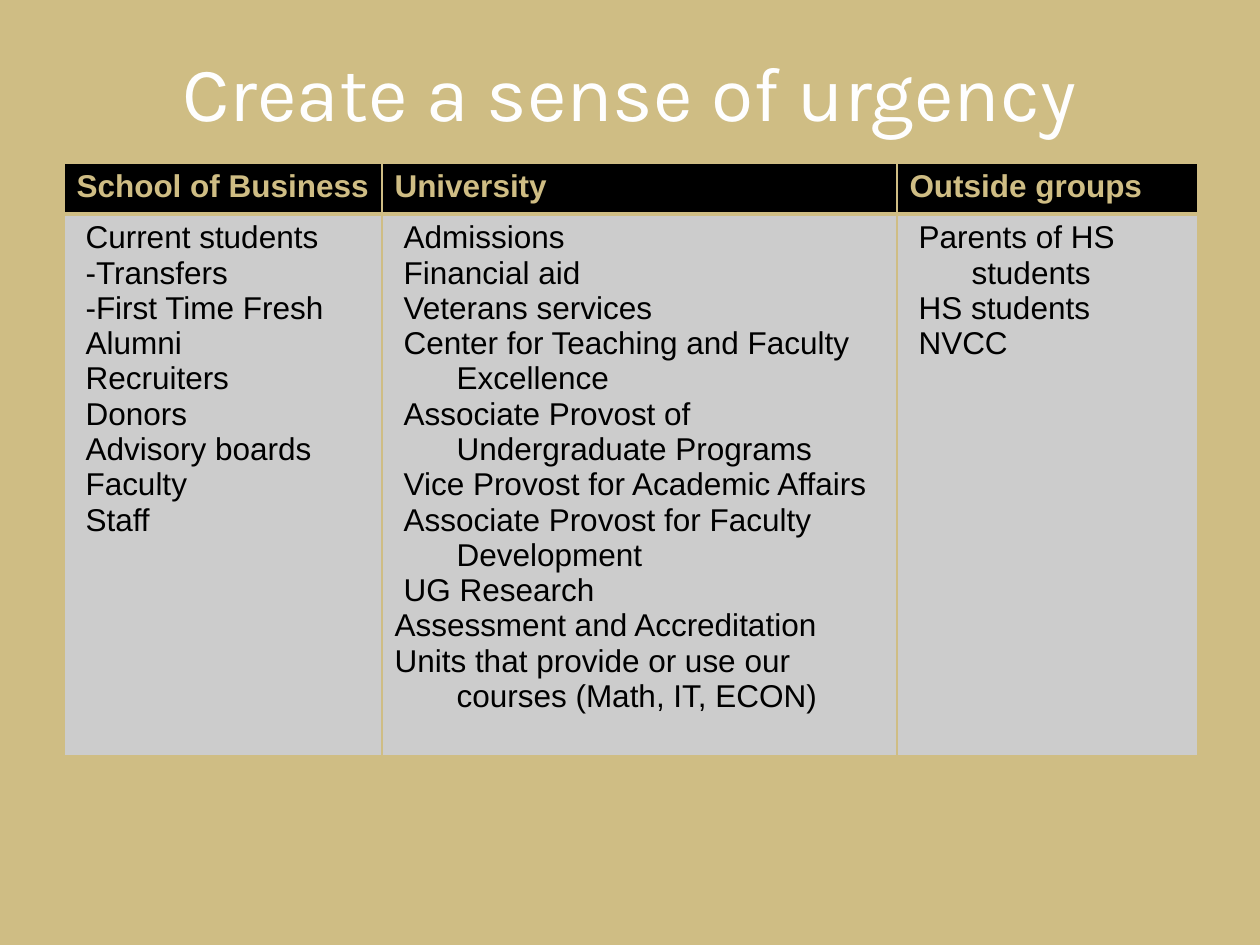
from lxml import etree
from pptx import Presentation
from pptx import util as u
from pptx.dml.color import RGBColor
from pptx.enum import text
from pptx.oxml import ns

PX = 914400 // 126
COLORS = {"gold": "CFBD84", "white": "FEFEFE", "black": "000000", "gray": "CCCCCC"}

TITLE = "Create a sense of urgency"
TITLE_BOX = (63, 38, 1134, 157)
TABLE_ORIGIN = (64, 163)
COLUMN_WIDTHS = (318, 515, 301)
ROW_HEIGHTS = (51, 542)
BORDERS = ({"L": 1, "R": 1, "T": 1, "B": 3}, {"L": 1, "R": 1, "T": 3, "B": 1})

# style: (level, left margin px, first-line indent px)
STYLES = {
    "item": (3, 9, 0),
    "subitem": (4, 9, 0),
    "hanging": (3, 62, -53),
    "flush": (0, 62, -62),
}
COLUMNS = [
    ("School of Business", [
        ("item", ["Current students"]),
        ("subitem", ["-Transfers", "-First Time Fresh"]),
        ("item", ["Alumni", "Recruiters", "Donors", "Advisory boards", "Faculty", "Staff"]),
    ]),
    ("University", [
        ("hanging", [
            "Admissions",
            "Financial aid",
            "Veterans services",
            "Center for Teaching and Faculty Excellence",
            "Associate Provost of Undergraduate Programs",
            "Vice Provost for Academic Affairs",
            "Associate Provost for Faculty Development",
            "UG Research",
        ]),
        ("flush", [
            "Assessment and Accreditation",
            "Units that provide or use our courses (Math, IT, ECON)",
        ]),
    ]),
    ("Outside groups", [
        ("hanging", ["Parents of HS students", "HS students", "NVCC"]),
    ]),
]


def color(name):
    return RGBColor.from_string(COLORS[name])


def set_font(paragraph, name, size, color_name, bold=False):
    font = paragraph.font
    font.name, font.size, font.bold = name, u.Pt(size), bold
    font.color.rgb = color(color_name)


def format_cell(cell, fill, borders):
    cell.fill.solid()
    cell.fill.fore_color.rgb = color(fill)
    properties = cell._tc.get_or_add_tcPr()
    for position, (side, points) in enumerate(borders.items()):
        line = etree.Element(ns.qn("a:ln" + side), w=str(u.Pt(points)))
        solid = etree.SubElement(line, ns.qn("a:solidFill"))
        etree.SubElement(solid, ns.qn("a:srgbClr"), val=COLORS["gold"])
        properties.insert(position, line)


def fill_list(frame, groups):
    items = [(style, item) for style, group in groups for item in group]
    for index, (style, item) in enumerate(items):
        paragraph = frame.add_paragraph() if index else frame.paragraphs[0]
        paragraph.text = item
        level, margin, indent = STYLES[style]
        paragraph.level = level
        properties = paragraph._p.get_or_add_pPr()
        properties.set("marL", str(margin * PX))
        properties.set("indent", str(indent * PX))
        set_font(paragraph, "Arial", 18, "black")


def add_title(slide):
    title = slide.shapes.title
    title.left, title.top, title.width, title.height = (side * PX for side in TITLE_BOX)
    frame = title.text_frame
    frame.text = TITLE
    frame.vertical_anchor = text.MSO_ANCHOR.TOP
    frame.margin_top = 7 * PX
    paragraph = frame.paragraphs[0]
    paragraph.alignment = text.PP_ALIGN.CENTER
    set_font(paragraph, "Karla", 44, "white")


def add_groups_table(slide):
    left, top = TABLE_ORIGIN
    table = slide.shapes.add_table(
        len(ROW_HEIGHTS), len(COLUMNS), left * PX, top * PX,
        sum(COLUMN_WIDTHS) * PX, sum(ROW_HEIGHTS) * PX).table
    for row, height in zip(table.rows, ROW_HEIGHTS):
        row.height = height * PX
    for index, (heading, groups) in enumerate(COLUMNS):
        table.columns[index].width = COLUMN_WIDTHS[index] * PX
        header, body = table.cell(0, index), table.cell(1, index)
        format_cell(header, "black", BORDERS[0])
        format_cell(body, "gray", BORDERS[1])
        header.text = heading
        set_font(header.text_frame.paragraphs[0], "Arial", 18, "gold", True)
        fill_list(body.text_frame, groups)


def main():
    presentation = Presentation()
    presentation.slide_width, presentation.slide_height = 1260 * PX, 945 * PX
    slide = presentation.slides.add_slide(presentation.slide_layouts[5])
    slide.background.fill.solid()
    slide.background.fill.fore_color.rgb = color("gold")
    add_title(slide)
    add_groups_table(slide)
    presentation.save("out.pptx")


if __name__ == "__main__":
    main()
